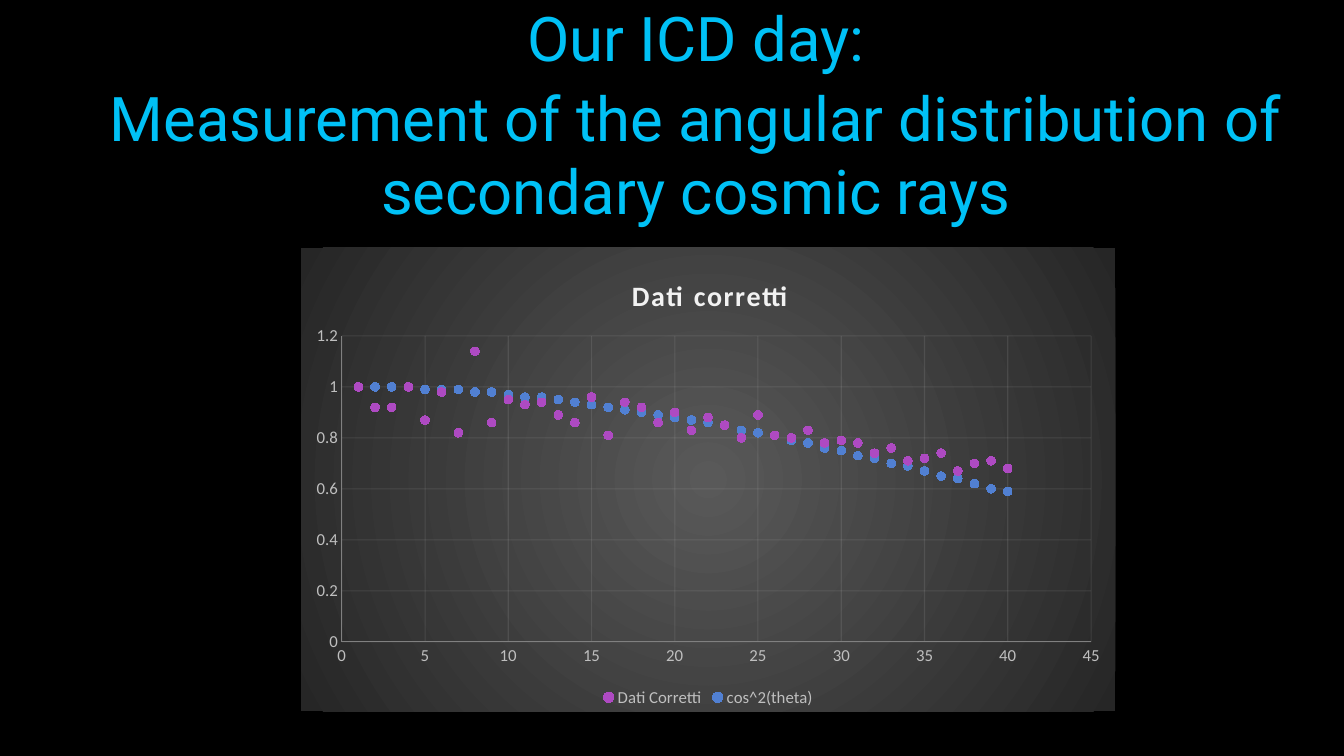
from math import cos, radians

from lxml.etree import SubElement
from pptx import Presentation
from pptx.chart.data import XyChartData
from pptx.dml.color import RGBColor
from pptx.enum.chart import XL_CHART_TYPE, XL_LEGEND_POSITION, XL_MARKER_STYLE, XL_TICK_MARK
from pptx.enum.text import PP_ALIGN
from pptx.oxml import parse_xml
from pptx.oxml.ns import nsdecls, qn
from pptx.util import Inches, Pt

CORRECTED = [
    1, 0.92, 0.92, 1, 0.87, 0.98, 0.82, 1.14, 0.86, 0.95,
    0.93, 0.94, 0.89, 0.86, 0.96, 0.81, 0.94, 0.92, 0.86, 0.9,
    0.83, 0.88, 0.85, 0.8, 0.89, 0.81, 0.8, 0.83, 0.78, 0.79,
    0.78, 0.74, 0.76, 0.71, 0.72, 0.74, 0.67, 0.7, 0.71, 0.68,
]
COS_SQUARED = [round(cos(radians(deg)) ** 2, 2) for deg in range(1, 41)]


def rgb(value):
    return RGBColor.from_string(value)


class Deck:
    """Holds the style and the current slide; places are shares of the slide."""

    HEAD_FONT, CHART_FONT = "Roboto", "Calibri"
    CYAN, LABEL, AXIS, PALE = "00C1F6", "BFBFBF", "808080", "F2F2F2"

    def __init__(self, prs):
        self.prs = prs
        self.s = prs.slides.add_slide(prs.slide_layouts[6])
        self.s.background.fill.solid()
        self.s.background.fill.fore_color.rgb = rgb("000000")

    def box(self, x, y, w, h):
        width, height = self.prs.slide_width, self.prs.slide_height
        return int(x * width), int(y * height), int(w * width), int(h * height)

    def style(self, font, name, size, color):
        font.name, font.size = name, Pt(size)
        font.color.rgb = rgb(color)

    def heading(self, place, lines, size):
        tf = self.s.shapes.add_textbox(*self.box(*place)).text_frame
        tf.word_wrap = True
        tf.margin_top = 0
        tf.text = "\n".join(lines)
        for i, p in enumerate(tf.paragraphs):
            p.alignment = PP_ALIGN.CENTER
            if i:
                p.space_before = Pt(4)
            self.style(p.runs[0].font, self.HEAD_FONT, size, self.CYAN)

    def scatter(self, place, title, series):
        data = XyChartData()
        for name, _, values in series:
            points = data.add_series(name)
            for x, y in enumerate(values, 1):
                points.add_data_point(x, y)
        frame = self.s.shapes.add_chart(XL_CHART_TYPE.XY_SCATTER, *self.box(*place), data)
        chart = frame.chart
        self.style(chart.font, self.CHART_FONT, 12, self.LABEL)
        self.backdrop(chart)
        self.title(chart, title)
        for plot_series, (_, color, _) in zip(chart.plots[0].series, series):
            self.markers(plot_series, color)
        chart.has_legend = True
        chart.legend.position = XL_LEGEND_POSITION.BOTTOM
        chart.legend.include_in_layout = False
        self.style(chart.legend.font, self.CHART_FONT, 12, self.LABEL)
        self.axis(chart.category_axis, 45, 5)
        self.axis(chart.value_axis, 1.2, 0.2)
        plot_area = chart._chartSpace.chart.plotArea
        self.layout(plot_area, 0, layoutTarget="inner", xMode="edge", yMode="edge",
                    x=0.05, y=0.19, w=0.92, h=0.66)

    def backdrop(self, chart):
        chart._chartSpace.chart.addnext(parse_xml(
            f'<c:spPr {nsdecls("c", "a")}><a:gradFill><a:gsLst>'
            '<a:gs pos="0"><a:srgbClr val="595959"/></a:gs>'
            '<a:gs pos="100000"><a:srgbClr val="262626"/></a:gs></a:gsLst>'
            '<a:path path="circle">'
            '<a:fillToRect l="50000" t="50000" r="50000" b="50000"/></a:path>'
            '</a:gradFill><a:ln><a:noFill/></a:ln></c:spPr>'))

    def title(self, chart, text):
        chart.has_title = True
        tf = chart.chart_title.text_frame
        tf.text = text
        r = tf.paragraphs[0].runs[0]
        self.style(r.font, self.CHART_FONT, 20, self.PALE)
        r.font.bold = True
        r._r.get_or_add_rPr().set("spc", "100")
        chart.chart_title.include_in_layout = False
        self.layout(chart.chart_title._element, 1, xMode="edge", yMode="edge", x=0.4, y=0.05)

    def layout(self, parent, index, **settings):
        for old in parent.findall(qn("c:layout")):
            parent.remove(old)
        layout = parse_xml(f'<c:layout {nsdecls("c")}/>')
        manual = SubElement(layout, qn("c:manualLayout"))
        for name, value in settings.items():
            SubElement(manual, qn(f"c:{name}")).set("val", str(value))
        parent.insert(index, layout)

    def markers(self, series, color):
        series.format.line.fill.background()
        series.marker.style = XL_MARKER_STYLE.CIRCLE
        series.marker.size = 6
        fmt = series.marker.format
        fmt.fill.solid()
        fmt.fill.fore_color.rgb = rgb(color)
        fmt.line.fill.background()

    def axis(self, axis, top, step):
        axis.minimum_scale, axis.maximum_scale, axis.major_unit = 0, top, step
        axis.major_tick_mark = axis.minor_tick_mark = XL_TICK_MARK.NONE
        axis.has_major_gridlines = True
        axis.tick_labels.number_format = "General"
        axis.tick_labels.number_format_is_linked = False
        self.style(axis.tick_labels.font, self.CHART_FONT, 12, self.LABEL)
        grid = axis.major_gridlines.format.line
        for line, color in ((axis.format.line, self.AXIS), (grid, self.PALE)):
            line.width = Pt(0.75)
            line.color.rgb = rgb(color)
        clr = axis.major_gridlines._xAx.find(f'{qn("c:majorGridlines")}//{qn("a:srgbClr")}')
        SubElement(clr, qn("a:alpha")).set("val", "10000")


def main():
    prs = Presentation()
    prs.slide_width, prs.slide_height = Inches(13.33), Inches(7.5)
    deck = Deck(prs)
    deck.heading((0.056, 0, 0.924, 0.31), [
        "Our ICD day:",
        "Measurement of the angular distribution of secondary cosmic rays",
    ], 44)
    deck.scatter((0.224, 0.328, 0.606, 0.613), "Dati corretti", [
        ("Dati Corretti", "AE4AC2", CORRECTED),
        ("cos^2(theta)", "5180D2", COS_SQUARED),
    ])
    prs.save("out.pptx")


if __name__ == "__main__":
    main()
